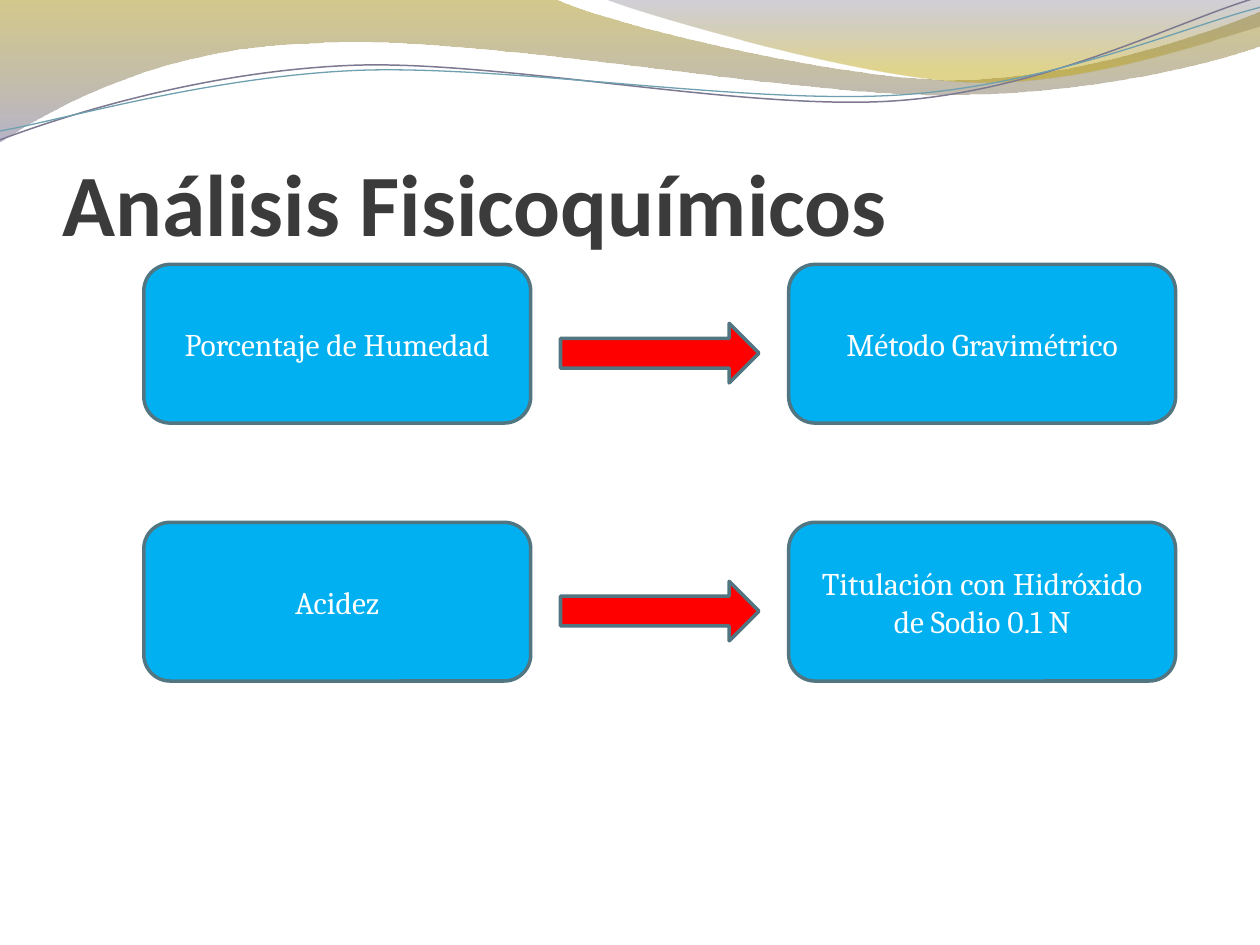
from lxml import etree
from pptx import Presentation
from pptx.dml.color import RGBColor
from pptx.enum.shapes import MSO_SHAPE
from pptx.enum.text import MSO_ANCHOR, PP_ALIGN
from pptx.oxml.ns import qn
from pptx.util import Cm, Pt

ROUNDED = MSO_SHAPE.ROUNDED_RECTANGLE
ARROW = MSO_SHAPE.RIGHT_ARROW
CENTER = PP_ALIGN.CENTER
MIDDLE = MSO_ANCHOR.MIDDLE
BOTTOM = MSO_ANCHOR.BOTTOM

# Each outline is a start point followed by segments, in cm:
# one point is a straight line, three points are a Bézier curve.
GOLD_WAVE = [
    (0, 0),
    [(11.18, -0.03)],
    [(12.09, 0.43), (16.87, 1.6), (19.25, 1.6)],
    [(21.67, 1.6), (24.33, 0.66), (25.4, 0.23)],
    [(25.43, 0.91)],
    [(24.97, 1.12), (22.1, 1.93), (18.95, 1.91)],
    [(15.8, 1.91), (9.7, 0.71), (6.53, 0.86)],
    [(3.28, 0.91), (1.17, 2.11), (-0.03, 2.87)],
    [(0, 0)],
]
VIOLET_WAVE = [
    (12.17, -0.03),
    [(12.93, 0.28), (17.32, 1.57), (19.53, 1.65)],
    [(21.74, 1.75), (24.41, 0.81), (25.4, 0.53)],
    [(25.4, 0)],
    [(12.17, -0.03)],
]
VIOLET_LINE = [
    (0, 2.82),
    [(1.22, 2.36), (4.01, 1.45), (7.04, 1.32)],
    [(10.03, 1.19), (15.06, 2.26), (18.11, 2.03)],
    [(21.16, 1.8), (23.83, 0.38), (25.35, -0.05)],
]
TEAL_LINE = [
    (0, 2.64),
    [(1.19, 2.44), (4.17, 1.55), (7.19, 1.42)],
    [(10.24, 1.3), (15.16, 2.13), (18.21, 1.91)],
    [(21.23, 1.7), (23.9, 0.53), (25.4, 0.15)],
]
ANALYSES = [
    ("Porcentaje de Humedad", "Método Gravimétrico"),
    ("Acidez", "Titulación con Hidróxido de Sodio 0.1 N"),
]
BOX_LEFT, BOX_TOP, BOX_WIDTH, BOX_HEIGHT = 2.9, 5.33, 7.8, 3.2
COLUMN_STEP, ROW_STEP = 13, 5.2
ARROW_LEFT, ARROW_TOP, ARROW_WIDTH, ARROW_HEIGHT = 11.3, 6.52, 4, 1.2


def color(hex_value):
    return RGBColor.from_string(hex_value)


def bend(shape, segments):
    """Turn the lines of each three-point segment into one Bézier curve."""
    lines = iter(list(shape.element.spPr.iter(qn("a:lnTo"))))
    for segment in segments:
        first, *others = [next(lines) for _ in segment]
        if others:
            first.tag = qn("a:cubicBezTo")
        for line in others:
            first.append(line[0])
            line.getparent().remove(line)


class SlideBuilder:
    title_font, body_font = "Calibri", "Cambria"
    title_color, body_color = "3B3B3B", "FFFFFF"
    box_color, arrow_color, outline_color = "00B0F0", "FF0000", "517682"

    def __init__(self, presentation):
        self.slide = presentation.slides.add_slide(presentation.slide_layouts[6])

    def freeform(self, outline, close):
        start, *segments = outline
        builder = self.slide.shapes.build_freeform(Cm(start[0]), Cm(start[1]))
        points = [(Cm(x), Cm(y)) for segment in segments for x, y in segment]
        builder.add_line_segments(points, close=close)
        shape = builder.convert_to_shape()
        bend(shape, segments)
        shape.shadow.inherit = False
        return shape

    def wave(self, outline, stops):
        """Add a closed shape; each stop is (position, colour, opacity in %)."""
        shape = self.freeform(outline, True)
        shape.line.fill.background()
        shape.fill.gradient()
        shape.fill.gradient_angle = 270
        for stop, (position, hex_value, _) in zip(shape.fill.gradient_stops, stops):
            stop.position = position
            stop.color.rgb = color(hex_value)
        for element, (_, _, opacity) in zip(shape.element.spPr.iter(qn("a:srgbClr")), stops):
            etree.SubElement(element, qn("a:alpha"), val=str(opacity * 1000))

    def curve(self, outline, hex_value, width):
        shape = self.freeform(outline, False)
        shape.fill.background()
        shape.line.color.rgb = color(hex_value)
        shape.line.width = Pt(width)

    def format_run(self, paragraph, name, size, hex_value, bold=False):
        font = paragraph.runs[0].font
        font.name, font.size, font.bold = name, Pt(size), bold
        font.color.rgb = color(hex_value)

    def title(self, text, left, top, width, height):
        box = self.slide.shapes.add_textbox(Cm(left), Cm(top), Cm(width), Cm(height))
        frame = box.text_frame
        frame.word_wrap = True
        frame.vertical_anchor = BOTTOM
        frame.margin_left = frame.margin_right = frame.margin_bottom = 0
        frame.text = text
        self.format_run(frame.paragraphs[0], self.title_font, 50, self.title_color, True)

    def outlined(self, kind, left, top, width, height, fill):
        shape = self.slide.shapes.add_shape(kind, Cm(left), Cm(top), Cm(width), Cm(height))
        shape.shadow.inherit = False
        shape.fill.solid()
        shape.fill.fore_color.rgb = color(fill)
        shape.line.color.rgb = color(self.outline_color)
        shape.line.width = Pt(2)
        return shape

    def box(self, text, left, top):
        shape = self.outlined(ROUNDED, left, top, BOX_WIDTH, BOX_HEIGHT, self.box_color)
        frame = shape.text_frame
        frame.word_wrap = True
        frame.vertical_anchor = MIDDLE
        frame.text = text
        paragraph = frame.paragraphs[0]
        paragraph.alignment = CENTER
        self.format_run(paragraph, self.body_font, 18, self.body_color)

    def arrow(self, left, top):
        self.outlined(ARROW, left, top, ARROW_WIDTH, ARROW_HEIGHT, self.arrow_color)


def main():
    presentation = Presentation()
    presentation.slide_width, presentation.slide_height = Cm(25.4), Cm(19.05)
    builder = SlideBuilder(presentation)
    builder.wave(GOLD_WAVE, [(0, "9E8700", 45), (1, "7B769C", 55)])
    builder.wave(VIOLET_WAVE, [(0, "66627C", 30), (0.8, "BDA100", 45)])
    builder.curve(VIOLET_LINE, "7C7991", 0.85)
    builder.curve(TEAL_LINE, "6EA0B0", 0.75)
    builder.title("Análisis Fisicoquímicos", 1.27, 1.95, 22.86, 3.18)
    for row, (analysis, method) in enumerate(ANALYSES):
        offset = row * ROW_STEP
        builder.box(analysis, BOX_LEFT, BOX_TOP + offset)
        builder.arrow(ARROW_LEFT, ARROW_TOP + offset)
        builder.box(method, BOX_LEFT + COLUMN_STEP, BOX_TOP + offset)
    presentation.save("out.pptx")


if __name__ == "__main__":
    main()
